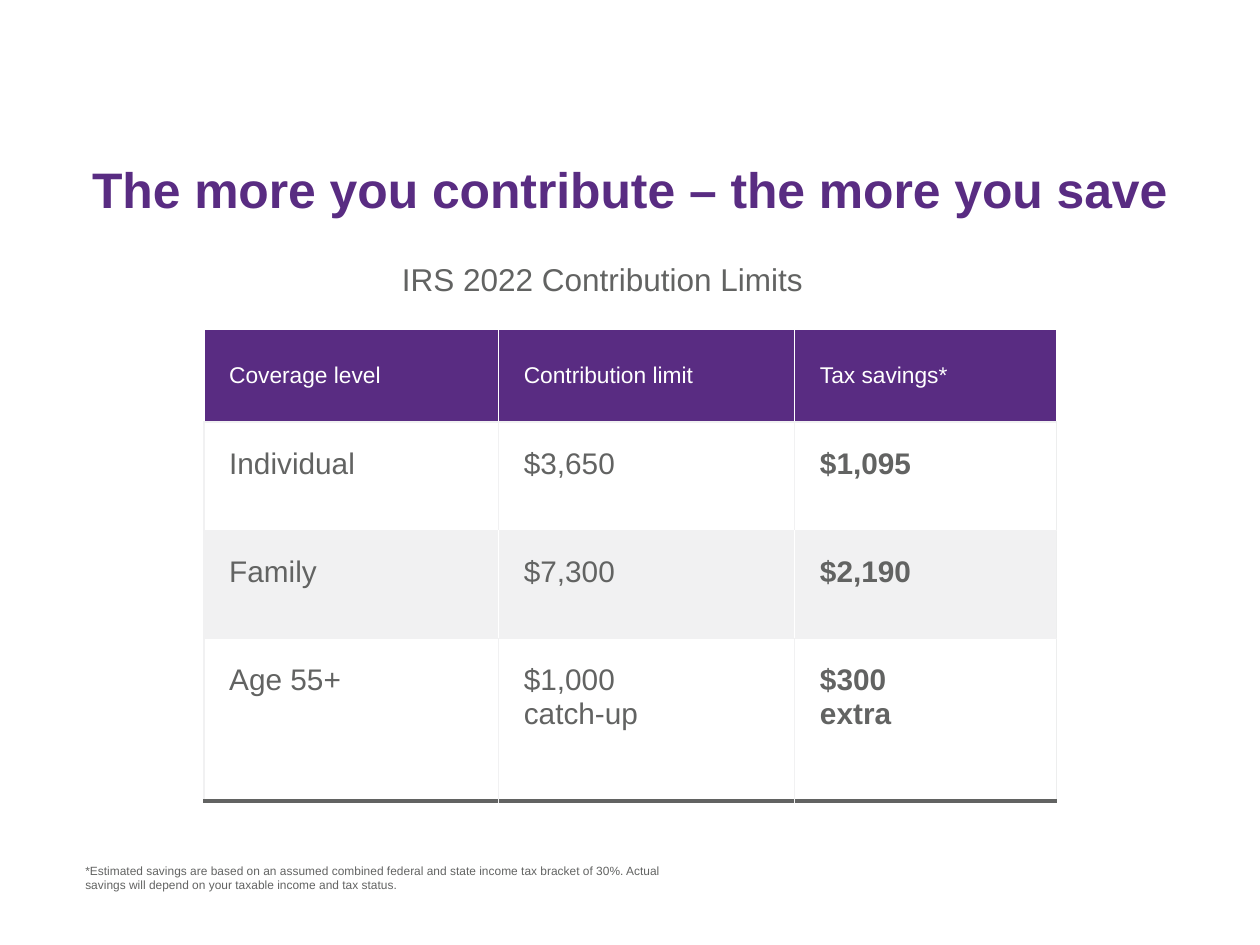
from pptx import Presentation
from pptx.dml.color import RGBColor as RGB
from pptx.enum.text import MSO_ANCHOR as ANCHOR, PP_ALIGN as ALIGN
from pptx.oxml import parse_xml
from pptx.oxml.ns import nsdecls
from pptx.util import Cm, Pt

THEME = dict(
    font="Arial",
    purple="592C82", gray="626362", band="F1F1F2", edge="EDEEEE", white="FFFFFF",
    title=28.5, subtitle=18, head=13, body=17, note=6.8,
)
TITLE = "The more you contribute – the more you save"
SUBTITLE = "IRS 2022 Contribution Limits"
NOTE = ("*Estimated savings are based on an assumed combined federal and state "
        "income tax bracket of 30%. Actual savings will depend on your taxable "
        "income and tax status.\u00a0")
ROWS = [
    ["Coverage level", "Contribution limit", "Tax savings*"],
    ["Individual", "$3,650", "$1,095"],
    ["Family", "$7,300", "$2,190"],
    ["Age 55+", "$1,000\ncatch-up", "$300\nextra"],
]
COL_WIDTHS = [5.94, 5.97, 5.28]
ROW_HEIGHTS = [1.88, 2.18, 2.18, 3.28]
TABLE_LEFT, TABLE_TOP = 4.11, 6.63
CELL_INSET = 0.51
BOX_INSET = 0.25


def write(tf, text, size, color, bold=False, align=ALIGN.LEFT):
    for i, line in enumerate(text.split("\n")):
        p = tf.paragraphs[0] if i == 0 else tf.add_paragraph()
        p.alignment = align
        r = p.add_run()
        r.text = line
        r.font.name = THEME["font"]
        r.font.size = Pt(THEME[size])
        r.font.bold = bold
        r.font.color.rgb = RGB.from_string(THEME[color])


def add_text(s, text, box, inset_y=BOX_INSET, **fmt):
    tf = s.shapes.add_textbox(*map(Cm, box)).text_frame
    tf.word_wrap = True
    tf.margin_left = tf.margin_right = Cm(BOX_INSET)
    tf.margin_top = tf.margin_bottom = Cm(inset_y)
    write(tf, text, **fmt)


def set_borders(cell, **sides):
    tc_pr = cell._tc.get_or_add_tcPr()
    for i, side in enumerate("LRTB"):
        color, width = sides[side]
        tc_pr.insert(i, parse_xml(
            f'<a:ln{side} {nsdecls("a")} w="{Pt(width)}"><a:solidFill>'
            f'<a:srgbClr val="{THEME[color]}"/></a:solidFill></a:ln{side}>'))


def add_limits_table(s):
    table = s.shapes.add_table(
        len(ROWS), len(COL_WIDTHS), Cm(TABLE_LEFT), Cm(TABLE_TOP),
        Cm(sum(COL_WIDTHS)), Cm(sum(ROW_HEIGHTS))).table
    for col, width in zip(table.columns, COL_WIDTHS):
        col.width = Cm(width)
    for row, height in zip(table.rows, ROW_HEIGHTS):
        row.height = Cm(height)
    last_row, last_col = len(ROWS) - 1, len(COL_WIDTHS) - 1
    for i, texts in enumerate(ROWS):
        head = i == 0
        fill = "purple" if head else "white" if i % 2 else "band"
        inner = "band" if fill == "white" else "white"
        for j, text in enumerate(texts):
            cell = table.cell(i, j)
            cell.fill.solid()
            cell.fill.fore_color.rgb = RGB.from_string(THEME[fill])
            cell.margin_left = cell.margin_right = Cm(CELL_INSET)
            cell.margin_top = cell.margin_bottom = Cm(CELL_INSET)
            cell.vertical_anchor = ANCHOR.MIDDLE if head else ANCHOR.TOP
            write(cell.text_frame, text, size="head" if head else "body",
                  color="white" if head else "gray",
                  bold=not head and j == last_col)
            left = "band" if j == 0 and not head else inner
            right = "edge" if j == last_col and not head else inner
            set_borders(cell, L=(left, 1), R=(right, 1),
                        T=("white" if head else "band", 1),
                        B=("gray", 3) if i == last_row else ("band", 1))


def main():
    prs = Presentation()
    prs.slide_width, prs.slide_height = Cm(25.4), Cm(19.05)
    s = prs.slides.add_slide(prs.slide_layouts[6])
    add_limits_table(s)
    add_text(s, NOTE, (1.47, 17.27, 12.7, 0.84), inset_y=0.13,
             size="note", color="gray")
    add_text(s, TITLE, (0, 2.95, 25.4, 1.73), size="title", color="purple",
             bold=True, align=ALIGN.CENTER)
    add_text(s, SUBTITLE, (5.72, 5, 12.85, 1.27), size="subtitle",
             color="gray", align=ALIGN.CENTER)
    prs.save("out.pptx")


if __name__ == "__main__":
    main()
